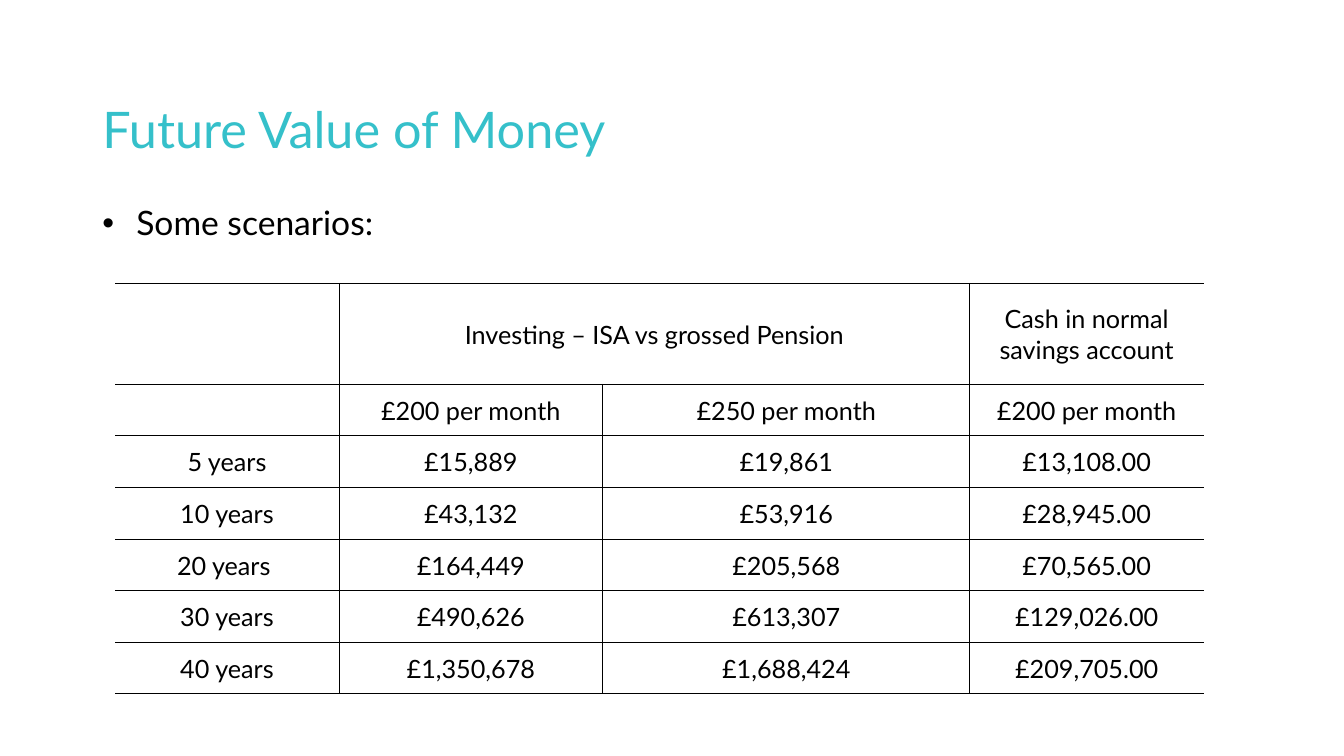
from dataclasses import dataclass

from lxml import etree
from pptx import Presentation
from pptx.dml.color import RGBColor
from pptx.enum.text import MSO_ANCHOR, PP_ALIGN
from pptx.oxml.ns import qn
from pptx.util import Cm, Pt

MIDDLE, TOP = MSO_ANCHOR.MIDDLE, MSO_ANCHOR.TOP
CENTER = PP_ALIGN.CENTER
FONT = "Lato"
COLORS = {"title": "35C0CA", "text": "000000", "line": "000000"}


@dataclass
class TextBlock:
    text: str
    top: float
    height: float
    size: int
    color: str
    anchor: MSO_ANCHOR
    space_before: int = 0
    bullet: str = ""


BLOCKS = [
    TextBlock("Future Value of Money", 2.16, 2.34, 36, "title", MIDDLE),
    TextBlock(" Some scenarios:", 5.08, 1.5, 24, "text", TOP, 10, "•"),
]
COL_WIDTHS = [5.64, 6.65, 9.25, 5.89]
HEADER_HEIGHT, ROW_HEIGHT = 2.54, 1.3
ROWS = [
    ["", "Investing – ISA vs grossed Pension", "", "Cash in normal savings account"],
    ["", "£200 per month", "£250 per month", "£200 per month"],
    ["5 years", "£15,889", "£19,861", "£13,108.00"],
    ["10 years", "£43,132", "£53,916", "£28,945.00"],
    ["20 years ", "£164,449", "£205,568", "£70,565.00"],
    ["30 years", "£490,626", "£613,307", "£129,026.00"],
    ["40 years", "£1,350,678", "£1,688,424", "£209,705.00"],
]


def style_font(p, size: int, color: str) -> None:
    p.font.name = FONT
    p.font.size = Pt(size)
    p.font.color.rgb = RGBColor.from_string(COLORS[color])


def add_bullet(p, char: str) -> None:
    pPr = p._p.get_or_add_pPr()
    pPr.set("marL", str(Cm(0.64)))
    pPr.set("indent", str(-Cm(0.64)))
    font = etree.Element(qn("a:buFont"), typeface="Arial")
    bullet = etree.Element(qn("a:buChar"), char=char)
    defaults = pPr.find(qn("a:defRPr"))
    defaults.addprevious(font)
    defaults.addprevious(bullet)


def add_text(slide, block: TextBlock) -> None:
    s = slide.shapes.add_textbox(Cm(2.33), Cm(block.top), Cm(29.21), Cm(block.height))
    tf = s.text_frame
    tf.word_wrap = True
    tf.vertical_anchor = block.anchor
    p = tf.paragraphs[0]
    p.text = block.text
    p.line_spacing = 0.9
    p.space_before = Pt(block.space_before)
    style_font(p, block.size, block.color)
    if block.bullet:
        add_bullet(p, block.bullet)


def set_border(cell, side: str, width: float) -> None:
    tcPr = cell._tc.get_or_add_tcPr()
    ln = etree.SubElement(tcPr, qn(f"a:ln{side}"), w=str(Pt(width)))
    if width:
        fill = etree.SubElement(ln, qn("a:solidFill"))
        etree.SubElement(fill, qn("a:srgbClr"), val=COLORS["line"])
    else:
        etree.SubElement(ln, qn("a:noFill"))


def fill_cell(cell, text: str) -> None:
    cell.margin_left = cell.margin_right = cell.margin_top = Cm(0.03)
    cell.margin_bottom = 0
    cell.vertical_anchor = MIDDLE
    p = cell.text_frame.paragraphs[0]
    p.text = text
    p.alignment = CENTER
    style_font(p, 18, "text")


def add_scenarios(slide) -> None:
    last_row, last_col = len(ROWS) - 1, len(COL_WIDTHS) - 1
    height = HEADER_HEIGHT + ROW_HEIGHT * last_row
    table = slide.shapes.add_table(
        len(ROWS), len(COL_WIDTHS), Cm(2.9), Cm(7.14), Cm(sum(COL_WIDTHS)), Cm(height)
    ).table
    table.first_row = table.horz_banding = False
    for col, width in zip(table.columns, COL_WIDTHS):
        col.width = Cm(width)
    for i, values in enumerate(ROWS):
        table.rows[i].height = Cm(ROW_HEIGHT if i else HEADER_HEIGHT)
        for j, value in enumerate(values):
            cell = table.cell(i, j)
            fill_cell(cell, value)
            set_border(cell, "L", 0.5 if j else 0)
            set_border(cell, "R", 0.5 if j < last_col else 0)
            set_border(cell, "T", 0.5 if i else 1)
            set_border(cell, "B", 0.5 if i < last_row else 1)
            cell.fill.background()
    table.cell(0, 1).merge(table.cell(0, 2))


def main() -> None:
    prs = Presentation()
    prs.slide_width, prs.slide_height = Cm(33.87), Cm(19.05)
    slide = prs.slides.add_slide(prs.slide_layouts[6])
    for block in BLOCKS:
        add_text(slide, block)
    add_scenarios(slide)
    prs.save("out.pptx")


if __name__ == "__main__":
    main()
